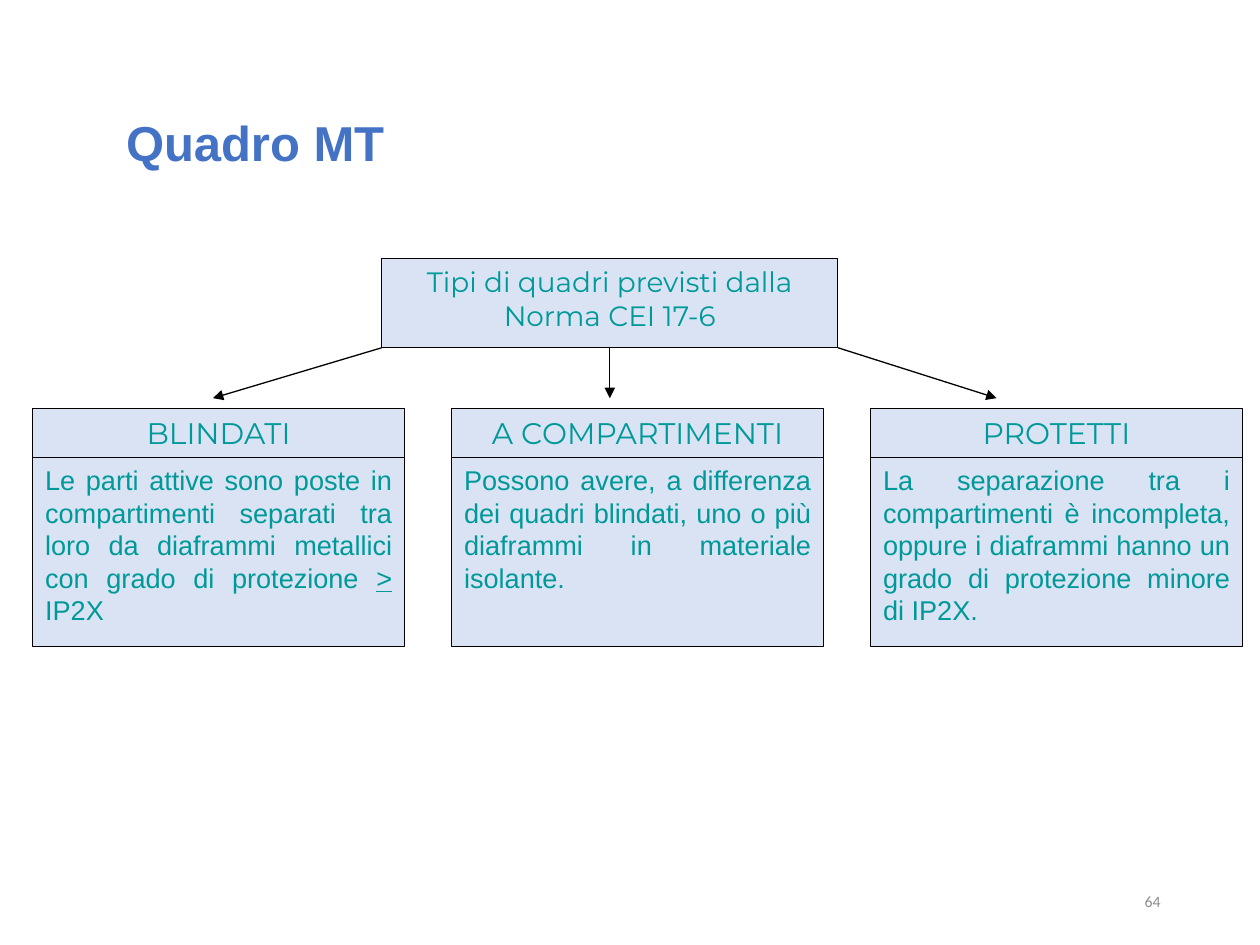
from dataclasses import dataclass

from lxml import etree
from pptx import Presentation
from pptx import util as u
from pptx.dml.color import RGBColor
from pptx.enum import shapes, text
from pptx.oxml.ns import qn

TEAL, PALE, BLACK = "009999", "DAE3F3", "000000"
LEFT, STEP, WIDTH = 0.26, 3.325, 2.95
HEAD_TOP, HEAD_HIGH = 3.24, 0.39
BODY_TOP, BODY_HIGH = 3.63, 1.5


@dataclass
class Run:
    words: str
    under: bool = False


@dataclass
class Style:
    font: str
    size: float
    color: str
    align: text.PP_ALIGN
    bold: bool = False


@dataclass
class Kind:
    name: str
    runs: list[Run]


TITLE = Style("Arial", 28, "4472C4", text.PP_ALIGN.LEFT, True)
ROOT = Style("Montserrat", 16, TEAL, text.PP_ALIGN.CENTER)
HEAD = Style("Montserrat", 17, TEAL, text.PP_ALIGN.CENTER)
BODY = Style("Arial", 15.5, TEAL, text.PP_ALIGN.JUSTIFY)
NUMBER = Style("Calibri", 9, "8C8C8C", text.PP_ALIGN.RIGHT)

KINDS = [
    Kind("BLINDATI", [
        Run("Le parti attive sono poste in compartimenti separati tra loro "
            "da diaframmi metallici con grado di protezione "),
        Run(">", True),
        Run(" IP2X"),
    ]),
    Kind("A COMPARTIMENTI", [
        Run("Possono avere, a differenza dei quadri blindati, uno o più "
            "diaframmi in materiale isolante."),
    ]),
    Kind("PROTETTI", [
        Run("La separazione tra i compartimenti è incompleta, oppure i "
            "diaframmi hanno un grado di protezione minore di IP2X."),
    ]),
]


def paint(target, color: str) -> None:
    target.rgb = RGBColor.from_string(color)


def write(shape, runs: list[Run], style: Style,
          anchor=text.MSO_ANCHOR.TOP) -> None:
    frame = shape.text_frame
    frame.word_wrap = True
    frame.vertical_anchor = anchor
    para = frame.paragraphs[0]
    para.alignment = style.align
    for item in runs:
        run = para.add_run()
        run.text = item.words
        run.font.name = style.font
        run.font.size = u.Pt(style.size)
        run.font.bold = style.bold
        run.font.underline = item.under
        paint(run.font.color, style.color)


def add_box(slide, x: float, y: float, w: float, h: float,
            runs: list[Run], style: Style):
    box = slide.shapes.add_shape(
        shapes.MSO_SHAPE.RECTANGLE,
        u.Inches(x), u.Inches(y), u.Inches(w), u.Inches(h))
    box.shadow.inherit = False
    box.fill.solid()
    paint(box.fill.fore_color, PALE)
    paint(box.line.color, BLACK)
    box.line.width = u.Pt(0.75)
    write(box, runs, style)
    return box


def add_arrow(slide, x1: float, y1: float, x2: float, y2: float):
    arrow = slide.shapes.add_connector(
        shapes.MSO_CONNECTOR.STRAIGHT,
        u.Inches(x1), u.Inches(y1), u.Inches(x2), u.Inches(y2))
    paint(arrow.line.color, BLACK)
    arrow.line.width = u.Pt(0.75)
    line = arrow.line._get_or_add_ln()
    etree.SubElement(line, qn("a:tailEnd"), type="triangle")
    etree.SubElement(arrow._element.spPr, qn("a:effectLst"))
    return arrow


def main() -> None:
    deck = Presentation()
    deck.slide_width, deck.slide_height = u.Inches(10), u.Inches(7.5)
    slide = deck.slides.add_slide(deck.slide_layouts[5])

    # Title
    title = slide.shapes.title
    title.left, title.top = u.Inches(0.9), u.Inches(0.84)
    title.width, title.height = u.Inches(5.99), u.Inches(0.57)
    write(title, [Run("Quadro MT")], TITLE)
    title.text_frame.auto_size = text.MSO_AUTO_SIZE.SHAPE_TO_FIT_TEXT

    # Root box and its arrows
    x, y, w, h = 3.03, 2.05, 3.62, 0.71
    root = add_box(slide, x, y, w, h,
                   [Run("Tipi di quadri previsti dalla Norma CEI 17-6")], ROOT)
    foot, tip = y + h, 3.16
    add_arrow(slide, x, foot, 1.69, tip)
    add_arrow(slide, x + w, foot, 7.91, tip)
    middle = add_arrow(slide, x + w / 2, foot, x + w / 2, tip)
    middle.begin_connect(root, 2)

    # One column for each kind of switchboard
    for i, kind in enumerate(KINDS):
        left = LEFT + i * STEP
        add_box(slide, left, HEAD_TOP, WIDTH, HEAD_HIGH, [Run(kind.name)], HEAD)
        add_box(slide, left, BODY_TOP, WIDTH, BODY_HIGH, kind.runs, BODY)

    # Slide number
    number = slide.shapes.add_textbox(
        u.Inches(7.06), u.Inches(6.95), u.Inches(2.25), u.Inches(0.4))
    write(number, [Run("64")], NUMBER, text.MSO_ANCHOR.MIDDLE)

    deck.save("out.pptx")


if __name__ == "__main__":
    main()
